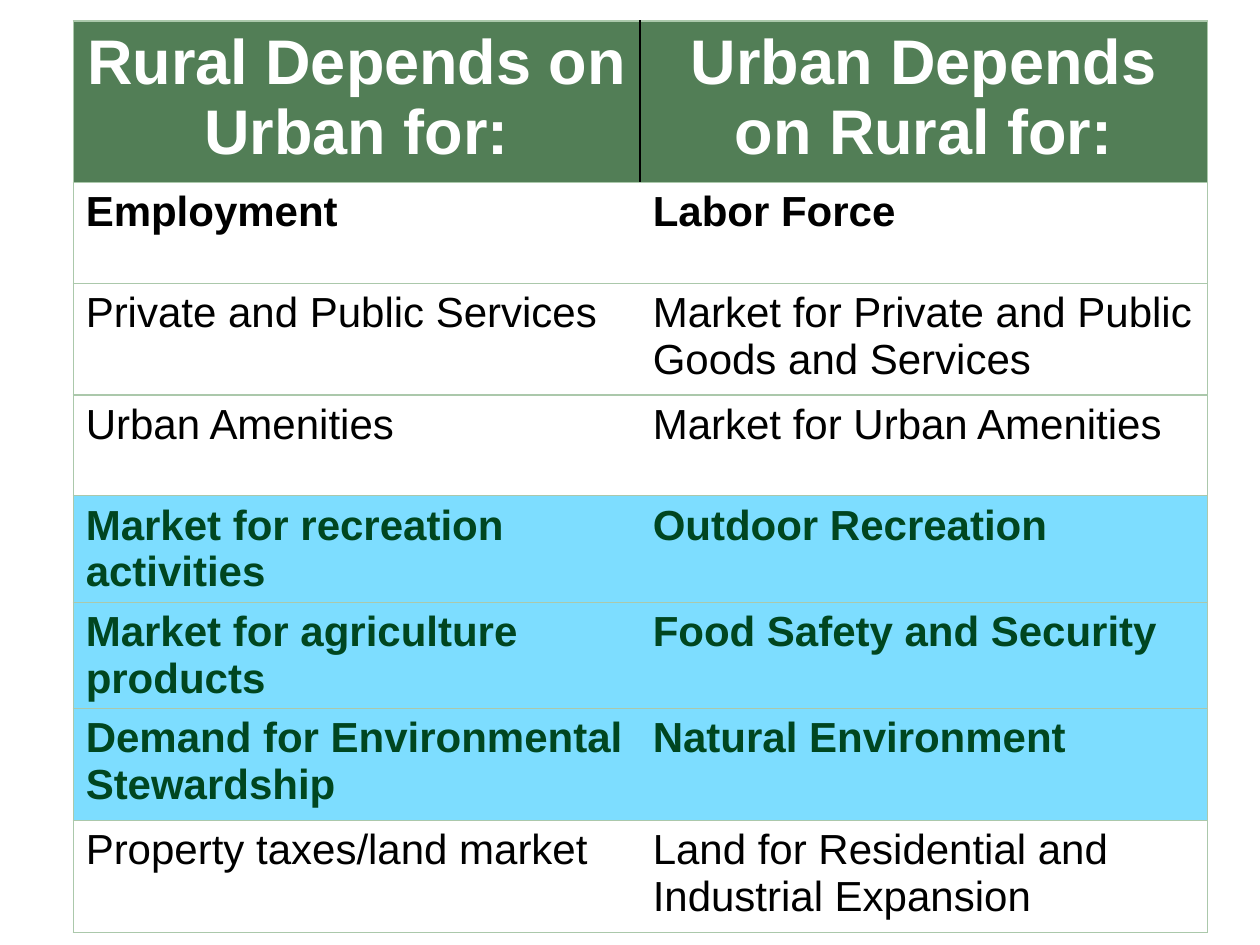
from pptx import Presentation
from pptx.dml.color import RGBColor
from pptx.enum.text import PP_ALIGN as Align
from pptx.oxml.ns import qn
from pptx.util import Pt
from lxml.etree import SubElement

WHITE, BLACK = "FFFFFF", "000000"
HEADER_GREEN, TEXT_GREEN = "527E56", "004620"
HIGHLIGHT_BLUE, RULE_GREEN = "7DDDFF", "ABC8AB"

RULE = (RULE_GREEN, 0.75)
HEADER_DIVIDER = (BLACK, 1)

# Style: fill, text colour, bold, text size, alignment, column divider
HEADER = (HEADER_GREEN, WHITE, True, 36, Align.CENTER, HEADER_DIVIDER)
STRONG = (WHITE, BLACK, True, 24, Align.LEFT, None)
PLAIN = (WHITE, BLACK, False, 24, Align.LEFT, None)
HIGHLIGHT = (HIGHLIGHT_BLUE, TEXT_GREEN, True, 24, Align.LEFT, None)

# Row: height, style, rural text, urban text
ROWS = [
    (92.2, HEADER, "Rural Depends on Urban for:", "Urban Depends on Rural for:"),
    (57.6, STRONG, "Employment", "Labor Force"),
    (64, PLAIN, "Private and Public Services",
     "Market for Private and Public Goods and Services"),
    (57.6, PLAIN, "Urban Amenities", "Market for Urban Amenities"),
    (57.6, HIGHLIGHT, "Market for recreation activities", "Outdoor Recreation"),
    (57.6, HIGHLIGHT, "Market for agriculture products", "Food Safety and Security"),
    (64, HIGHLIGHT, "Demand for Environmental Stewardship", "Natural Environment"),
    (64, PLAIN, "Property taxes/land market",
     "Land for Residential and Industrial Expansion"),
]
COLUMN_WIDTH = 324


def color(hex_string):
    return RGBColor.from_string(hex_string)


def set_borders(cell, left, right):
    """Draw the cell's four borders; None hides a side. Call before filling."""
    properties = cell._tc.get_or_add_tcPr()
    sides = {"lnL": left, "lnR": right, "lnT": RULE, "lnB": RULE}
    for tag, border in sides.items():
        line = SubElement(properties, qn(f"a:{tag}"))
        if border is None:
            SubElement(line, qn("a:noFill"))
            continue
        line_color, width = border
        line.set("w", str(Pt(width)))
        fill = SubElement(line, qn("a:solidFill"))
        SubElement(fill, qn("a:srgbClr")).set("val", line_color)


def format_cell(cell, text, style):
    fill_color, text_color, bold, size, alignment, _ = style
    cell.fill.solid()
    cell.fill.fore_color.rgb = color(fill_color)
    cell.text_frame.text = text
    paragraph = cell.text_frame.paragraphs[0]
    paragraph.alignment = alignment
    font = paragraph.runs[0].font
    font.name, font.size, font.bold = "Arial", Pt(size), bold
    font.color.rgb = color(text_color)


def add_dependency_table(slide):
    height = sum(row[0] for row in ROWS)
    table = slide.shapes.add_table(
        len(ROWS), 2, Pt(41.8), Pt(12), Pt(2 * COLUMN_WIDTH), Pt(height)).table
    table.horz_banding = False
    for column in table.columns:
        column.width = Pt(COLUMN_WIDTH)
    for row, (row_height, style, rural, urban) in zip(table.rows, ROWS):
        row.height = Pt(row_height)
        rural_cell, urban_cell = row.cells
        divider = style[-1]
        set_borders(rural_cell, RULE, divider)
        set_borders(urban_cell, divider, RULE)
        format_cell(rural_cell, rural, style)
        format_cell(urban_cell, urban, style)


def main():
    presentation = Presentation()
    presentation.slide_width, presentation.slide_height = Pt(720), Pt(540)
    slide = presentation.slides.add_slide(presentation.slide_layouts[6])
    add_dependency_table(slide)
    presentation.save("out.pptx")


if __name__ == "__main__":
    main()
